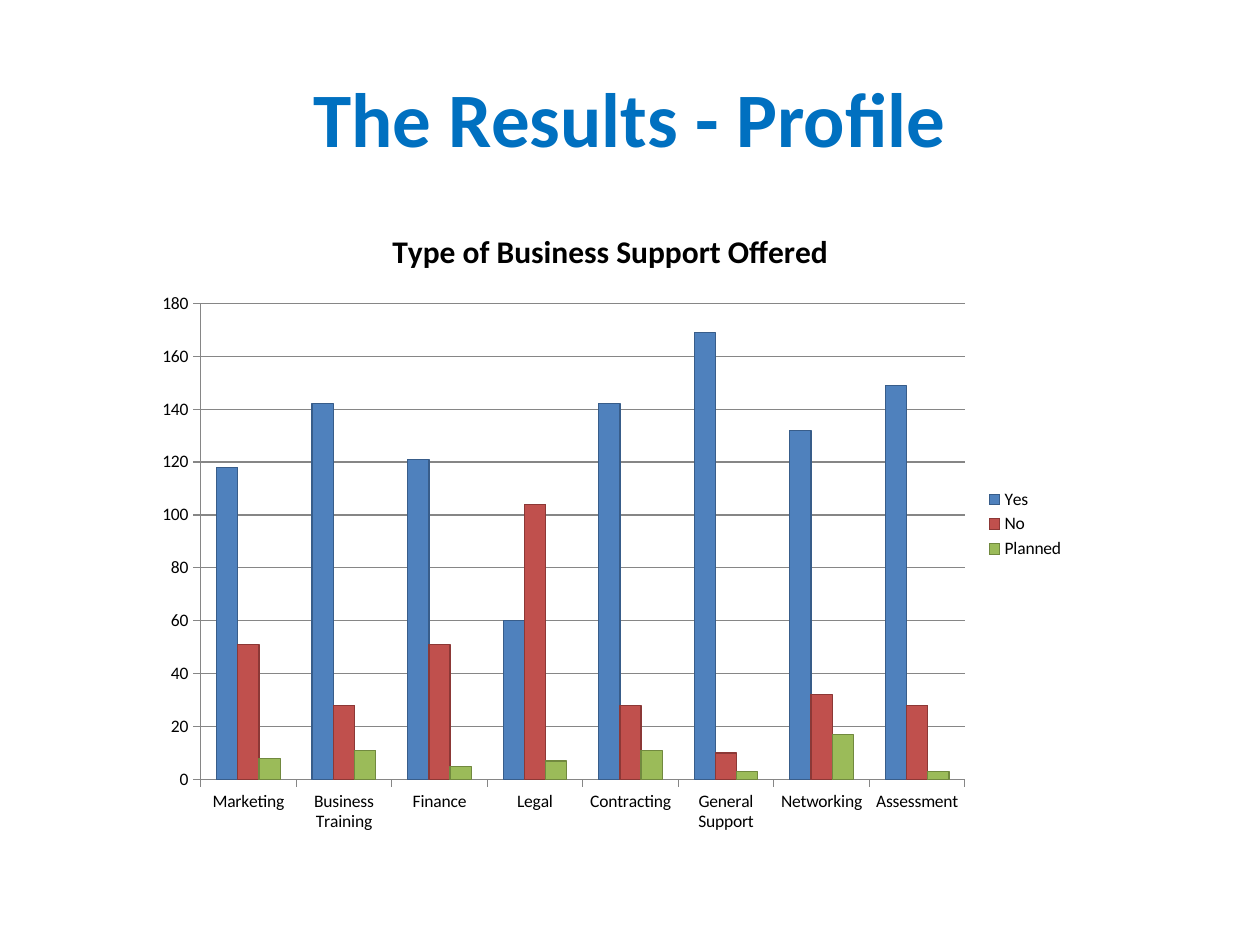
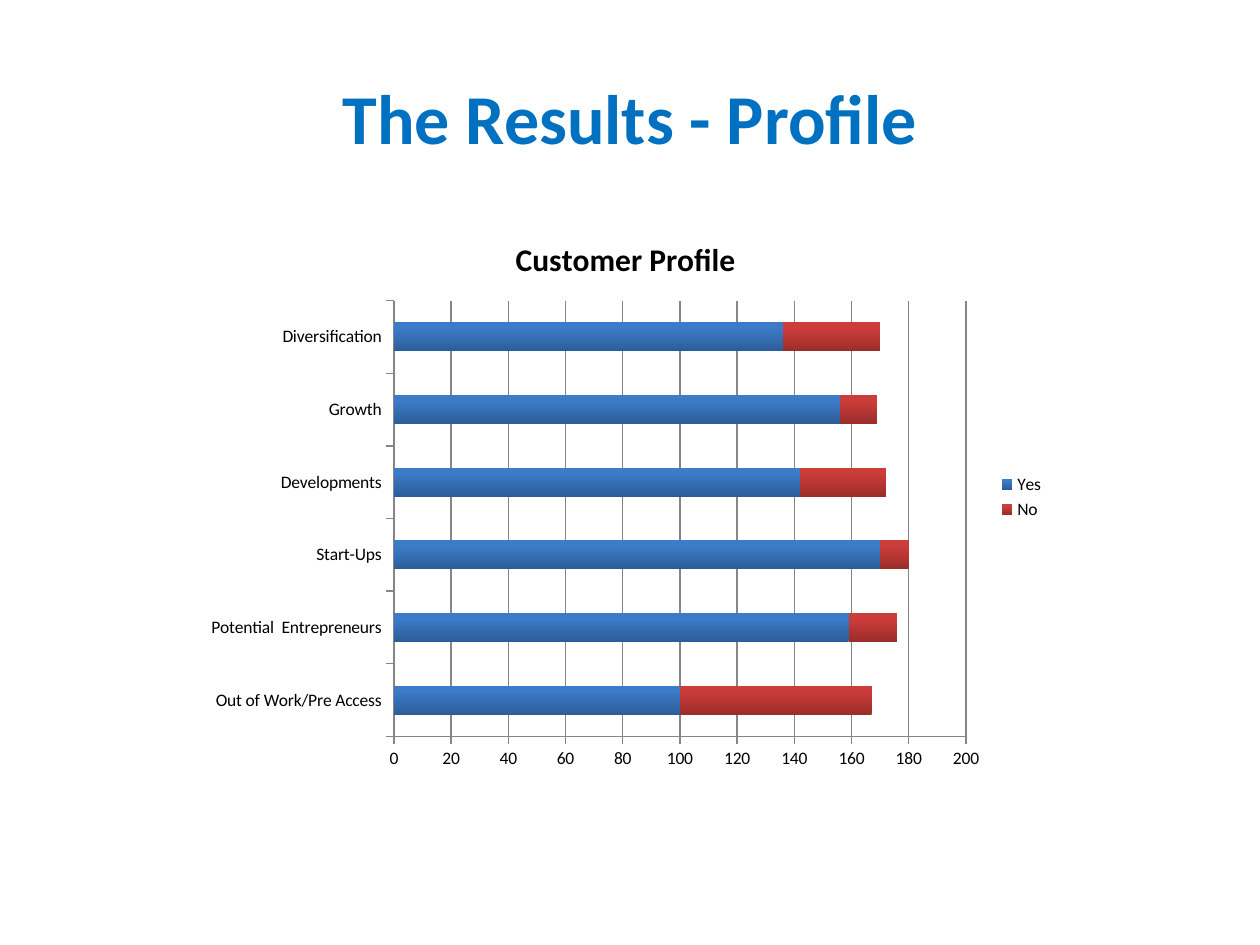
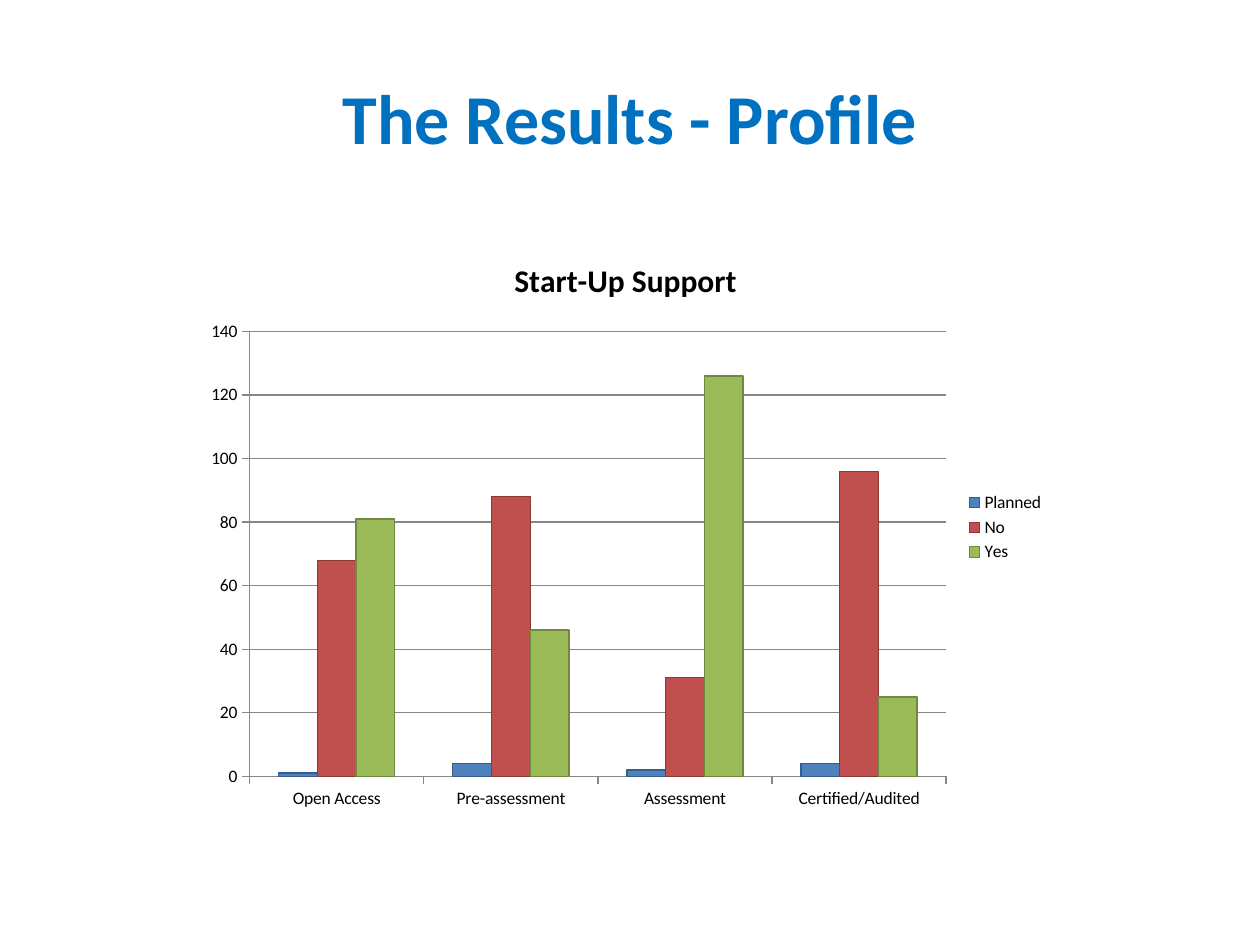
from pptx import Presentation
from pptx.chart.data import CategoryChartData as ChartData
from pptx.dml.color import RGBColor as Rgb
from pptx.enum.chart import XL_CHART_TYPE as Kind, XL_LEGEND_POSITION as Side, XL_TICK_MARK as Tick
from pptx.enum.text import MSO_ANCHOR as Anchor, PP_ALIGN as Align
from pptx.util import Emu, Pt

SCALE = 9144
FONT = "Calibri"
HEAD = "The Results - Profile"
COLORS = {
    "title": "0070C0",
    "text": "000000",
    "grid": "868686",
    "back": "FFFFFF",
}
FLAT = [
    {"fill": "4F81BD", "edge": "385D8A"},
    {"fill": "C0504D", "edge": "8C3836"},
    {"fill": "9BBB59", "edge": "71893F"},
]
SHADED = [
    {"low": "2C5D98", "high": "3C7BC7"},
    {"low": "9B2D2A", "high": "CB3D3A"},
]


def px(num):
    return Emu(num * SCALE)


def rgb(name):
    return Rgb.from_string(COLORS.get(name, name))


def style(font, size, color, bold=False):
    font.name = FONT
    font.size = Pt(size)
    font.bold = bold
    font.color.rgb = rgb(color)


def add_run(para, text, size, color):
    run = para.add_run()
    run.text = text
    style(run.font, size, color, True)


def add_page(deck, size):
    page = deck.slides.add_slide(deck.slide_layouts[5])
    page.background.fill.solid()
    page.background.fill.fore_color.rgb = rgb("back")
    title = page.shapes.title
    title.left, title.top, title.width, title.height = map(px, (50, 30, 900, 125))
    frame = title.text_frame
    frame.word_wrap = True
    frame.vertical_anchor = Anchor.MIDDLE
    para = frame.paragraphs[0]
    para.alignment = Align.CENTER
    add_run(para, HEAD, size, "title")
    return page


def paint_flat(form, tone):
    form.fill.solid()
    form.fill.fore_color.rgb = rgb(tone["fill"])
    form.line.color.rgb = rgb(tone["edge"])
    form.line.width = Pt(0.75)


def paint_shade(form, tone):
    form.fill.gradient()
    form.fill.gradient_angle = 90
    stops = form.fill.gradient_stops
    for stop, key, place in zip(stops, ("low", "high"), (0, 0.8)):
        stop.color.rgb = rgb(tone[key])
        stop.position = place
    form.line.fill.background()


def set_axis(axis, grid):
    axis.major_tick_mark = Tick.OUTSIDE
    axis.minor_tick_mark = Tick.NONE
    axis.has_major_gridlines = grid
    lines = [axis.format.line]
    if grid:
        lines.append(axis.major_gridlines.format.line)
    for line in lines:
        line.color.rgb = rgb("grid")
        line.width = Pt(0.75)


def add_bars(page, kind, box, title, cats, rows):
    data = ChartData(number_format="General")
    data.categories = cats
    for name, vals in rows.items():
        data.add_series(name, vals)
    chart = page.shapes.add_chart(kind, *map(px, box), data).chart
    style(chart.font, 10, "text")

    chart.has_title = True
    add_run(chart.chart_title.text_frame.paragraphs[0], title, 18, "text")
    chart.chart_title.include_in_layout = False
    chart.has_legend = True
    chart.legend.position = Side.RIGHT
    chart.legend.include_in_layout = False
    set_axis(chart.category_axis, False)
    set_axis(chart.value_axis, True)

    stacked = kind == Kind.BAR_STACKED
    plot = chart.plots[0]
    plot.vary_by_categories = False
    plot.gap_width = 150
    plot.overlap = 100 if stacked else 0
    paint, tones = (paint_shade, SHADED) if stacked else (paint_flat, FLAT)
    for row, tone in zip(plot.series, tones):
        paint(row.format, tone)


def main():
    deck = Presentation()
    deck.slide_width, deck.slide_height = px(1000), px(750)

    add_bars(
        add_page(deck, 44), Kind.COLUMN_CLUSTERED, (114, 162, 741, 508),
        "Type of Business Support Offered",
        ["Marketing", "Business Training", "Finance", "Legal",
         "Contracting", "General Support", "Networking", "Assessment"],
        {
            "Yes": [118, 142, 121, 60, 142, 169, 132, 149],
            "No": [51, 28, 51, 104, 28, 10, 32, 28],
            "Planned": [8, 11, 5, 7, 11, 3, 17, 3],
        },
    )
    add_bars(
        add_page(deck, 40), Kind.BAR_STACKED, (154, 170, 685, 449),
        "Customer Profile",
        ["Out of Work/Pre Access", "Potential  Entrepreneurs", "Start-Ups",
         "Developments", "Growth", "Diversification"],
        {
            "Yes": [100, 159, 170, 142, 156, 136],
            "No": [67, 17, 10, 30, 13, 34],
        },
    )
    add_bars(
        add_page(deck, 40), Kind.COLUMN_CLUSTERED, (154, 186, 685, 465),
        "Start-Up Support",
        ["Open Access", "Pre-assessment", "Assessment", "Certified/Audited"],
        {
            "Planned": [1, 4, 2, 4],
            "No": [68, 88, 31, 96],
            "Yes": [81, 46, 126, 25],
        },
    )
    deck.save("out.pptx")


if __name__ == "__main__":
    main()
